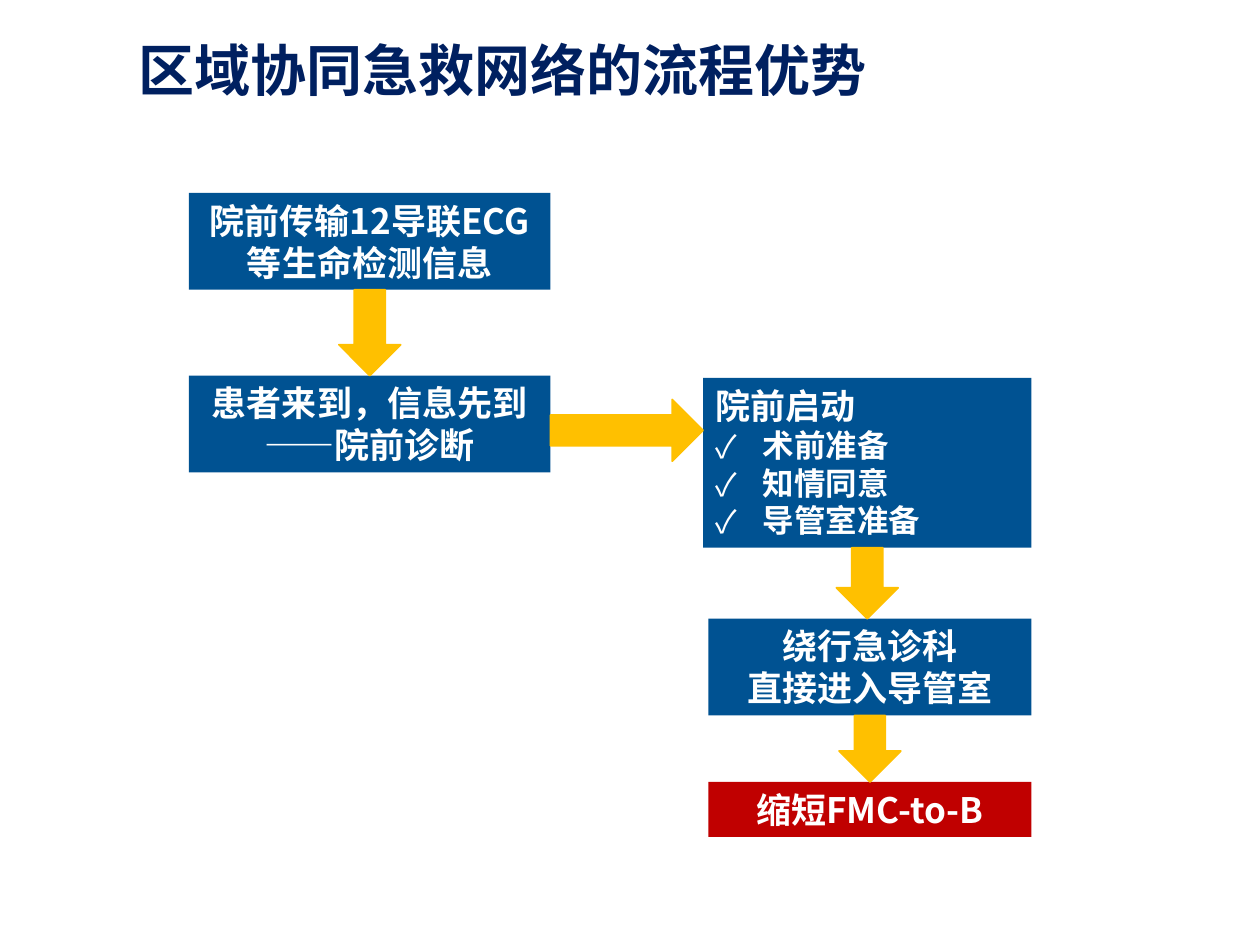
from lxml.etree import SubElement
from pptx import Presentation
from pptx.dml.color import RGBColor
from pptx.enum.shapes import MSO_SHAPE
from pptx.enum.text import MSO_ANCHOR, PP_ALIGN
from pptx.oxml.ns import qn
from pptx.util import Pt

COLORS = {"title": "002060", "step": "005292", "goal": "C00000",
          "arrow": "FFC000", "text": "FFFFFF"}
FONT = "Noto Sans CJK SC"
ARROW_WIDTH = 35.3


def color(name):
    """Return the named colour."""
    return RGBColor.from_string(COLORS[name])


def format_paragraph(paragraph, size, color_name, align):
    """Set the alignment and font of a paragraph."""
    paragraph.alignment = align
    for run in paragraph.runs:
        run.font.size = Pt(size)
        run.font.bold = True
        run.font.name = FONT
        run.font.color.rgb = color(color_name)
        SubElement(run.font._element, qn("a:ea"), typeface=FONT)


def add_check(paragraph):
    """Give a paragraph a hanging check mark."""
    properties = paragraph._p.get_or_add_pPr()
    properties.set("marL", str(Pt(27)))
    properties.set("indent", str(-Pt(27)))
    SubElement(properties, qn("a:buFont"), typeface=FONT)
    SubElement(properties, qn("a:buChar"), char="✓")


def add_title(slide, box, text):
    """Place the slide title in the box."""
    title = slide.shapes.title
    title.left, title.top, title.width, title.height = map(Pt, box)
    frame = title.text_frame
    frame.text = text
    frame.vertical_anchor = MSO_ANCHOR.MIDDLE
    format_paragraph(frame.paragraphs[0], 32, "title", PP_ALIGN.LEFT)


def add_step(slide, box, lines, fill="step", checks=(), align=PP_ALIGN.CENTER):
    """Draw one step of the process, with optional checked items."""
    step = slide.shapes.add_shape(MSO_SHAPE.RECTANGLE, *map(Pt, box))
    step.shadow.inherit = False
    step.fill.solid()
    step.fill.fore_color.rgb = color(fill)
    step.line.fill.background()
    frame = step.text_frame
    frame.word_wrap = True
    frame.vertical_anchor = MSO_ANCHOR.TOP
    frame.text = "\n".join([*lines, *checks])
    for index, paragraph in enumerate(frame.paragraphs):
        checked = index >= len(lines)
        paragraph.line_spacing = Pt(21.5 if checked else 24)
        if checked:
            add_check(paragraph)
        format_paragraph(paragraph, 18 if checked else 20, "text", align)


def add_arrow(slide, box, rotation=0):
    """Draw a block arrow in the box, turned by the rotation."""
    arrow = slide.shapes.add_shape(MSO_SHAPE.DOWN_ARROW, *map(Pt, box))
    arrow.rotation = rotation
    arrow.shadow.inherit = False
    arrow.fill.solid()
    arrow.fill.fore_color.rgb = color("arrow")
    arrow.line.color.rgb = color("arrow")
    arrow.line.width = Pt(1)


def add_down_arrow(slide, upper, lower):
    """Link an upper step to the one below it."""
    left, top, width, height = upper
    start = top + height
    add_arrow(slide, (left + (width - ARROW_WIDTH) / 2, start,
                      ARROW_WIDTH, lower[1] - start))


def add_right_arrow(slide, before, after, middle):
    """Link a step to the one on its right, at the given height."""
    start, end = before[0] + before[2], after[0]
    length = end - start
    add_arrow(slide, ((start + end - ARROW_WIDTH) / 2, middle - length / 2,
                      ARROW_WIDTH, length), 270)


def add_process(slide):
    """Place the steps and the arrows between them."""
    transfer = (108, 110.2, 206.6, 55.4)
    diagnosis = (108, 214.6, 206.6, 55.4)
    activation = (401.8, 216, 187.6, 97)
    bypass = (404.8, 353.5, 184.6, 55.4)
    goal = (404.8, 446.8, 184.6, 31.5)

    add_step(slide, transfer, ["院前传输12导联ECG等生命检测信息"])
    add_step(slide, diagnosis, ["患者来到，信息先到", "——院前诊断"])
    add_step(slide, activation, ["院前启动"], align=PP_ALIGN.LEFT,
             checks=["术前准备", "知情同意", "导管室准备"])
    add_step(slide, bypass, ["绕行急诊科", "直接进入导管室"])
    add_step(slide, goal, ["缩短FMC-to-B"], "goal")

    add_down_arrow(slide, transfer, diagnosis)
    add_right_arrow(slide, diagnosis, activation, 245.9)
    add_down_arrow(slide, activation, bypass)
    add_down_arrow(slide, bypass, goal)


def main():
    """Build and save the slide."""
    presentation = Presentation()
    presentation.slide_width, presentation.slide_height = Pt(720), Pt(540)
    slide = presentation.slides.add_slide(presentation.slide_layouts[5])
    add_title(slide, (72, 0, 648, 79.2), "区域协同急救网络的流程优势")
    add_process(slide)
    presentation.save("out.pptx")


if __name__ == "__main__":
    main()
